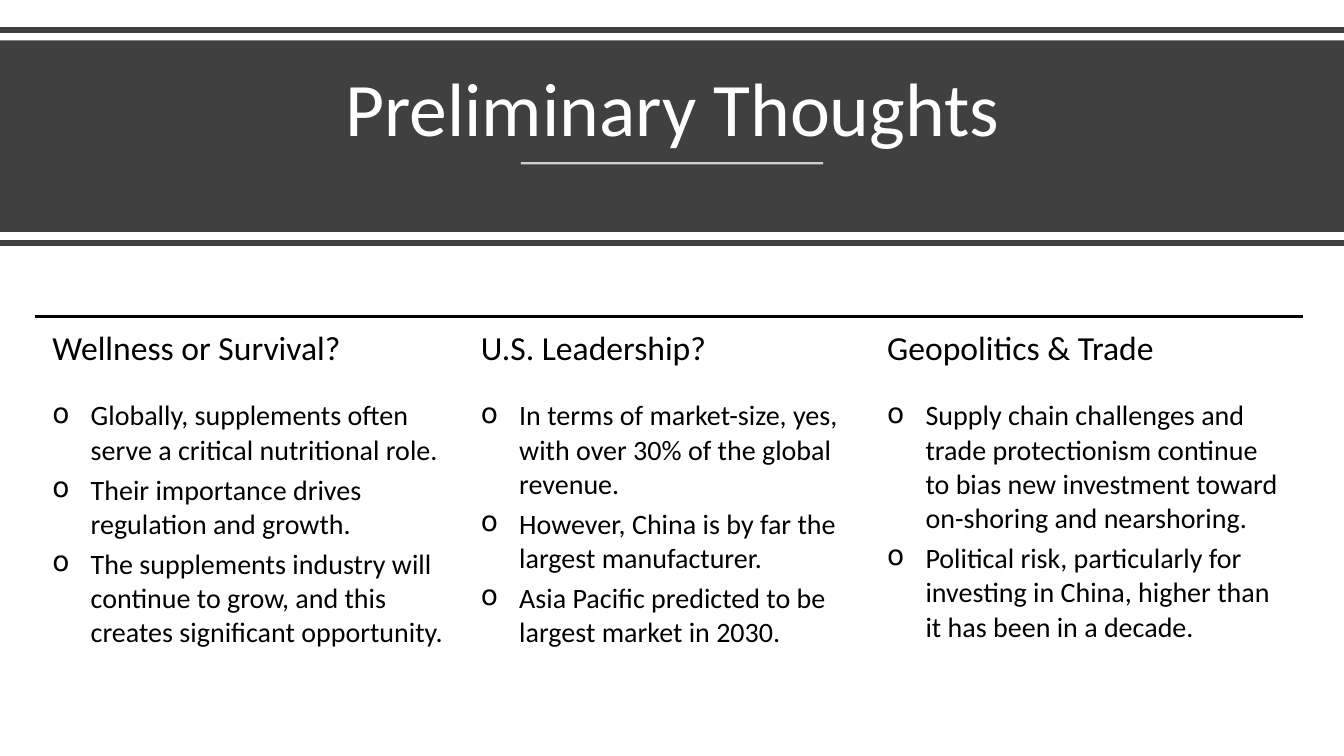
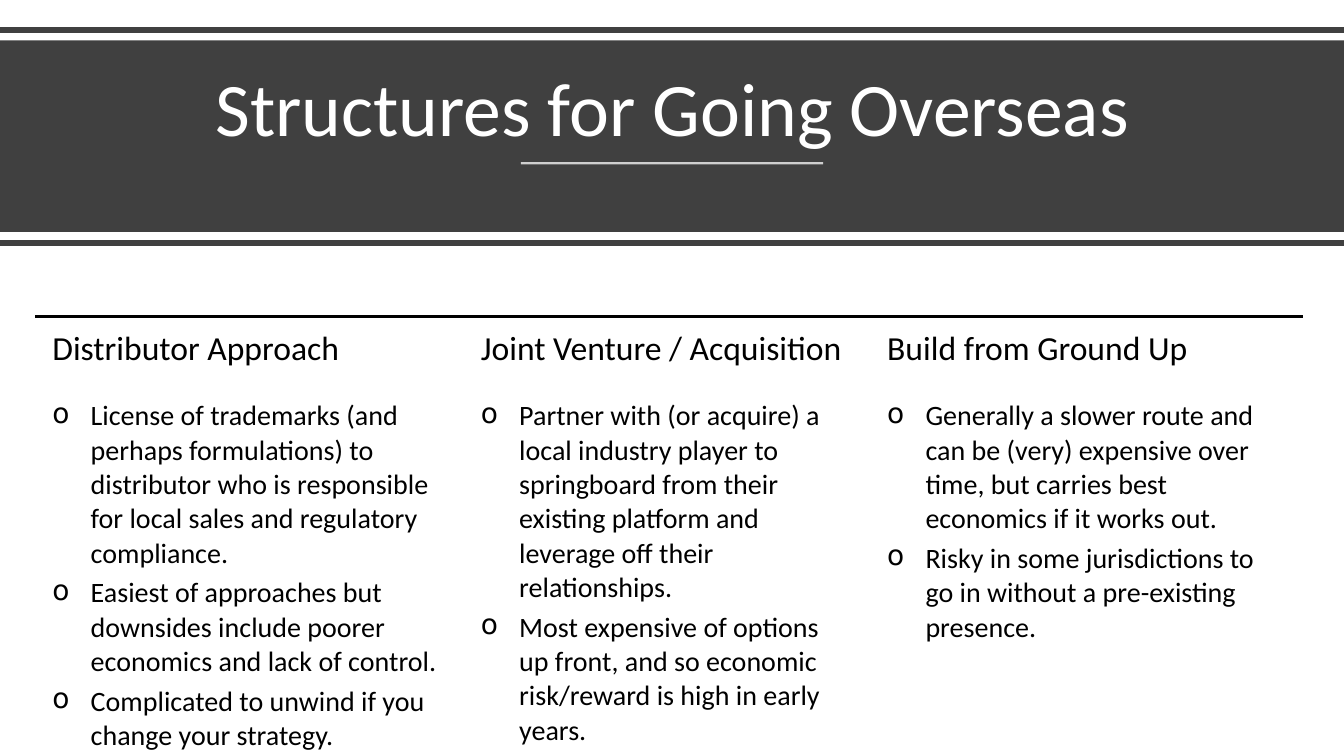
from lxml import etree
from pptx import Presentation
from pptx.dml.color import RGBColor as RGB
from pptx.enum.shapes import MSO_CONNECTOR as CONN, MSO_SHAPE as SHAPE
from pptx.enum.text import MSO_ANCHOR as ANCHOR, PP_ALIGN as ALIGN
from pptx.oxml.ns import qn
from pptx.util import Inches, Pt

COLORS = {"band": "404040", "paper": "FFFFFF", "ink": "000000"}
FONT = "Calibri"
WIDE, HIGH = 13.33, 7.5
COLS = (4.25, 4.03, 4.29)
ROWS = (0.7, 2.69)
INDENT = 0.38

SLIDES = [
    ("Preliminary Thoughts", [
        ("Wellness or Survival?", [
            "Globally, supplements often serve a critical nutritional role.",
            "Their importance drives regulation and growth.",
            "The supplements industry will continue to grow, and this "
            "creates significant opportunity."]),
        ("U.S. Leadership?", [
            "In terms of market-size, yes, with over 30% of the global revenue.",
            "However, China is by far the largest manufacturer.",
            "Asia Pacific predicted to be largest market in 2030."]),
        ("Geopolitics & Trade", [
            "Supply chain challenges and trade protectionism continue to bias "
            "new investment toward on-shoring and nearshoring.",
            "Political risk, particularly for investing in China, higher than "
            "it has been in a decade."]),
    ]),
    ("Structures for Going Overseas", [
        ("Distributor Approach", [
            "License of trademarks (and perhaps formulations) to distributor "
            "who is responsible for local sales and regulatory compliance.",
            "Easiest of approaches but downsides include poorer economics and "
            "lack of control.",
            "Complicated to unwind if you change your strategy."]),
        ("Joint Venture / Acquisition", [
            "Partner with (or acquire) a local industry player to springboard "
            "from their existing platform and leverage off their relationships.",
            "Most expensive of options up front, and so economic risk/reward "
            "is high in early years."]),
        ("Build from Ground Up", [
            "Generally a slower route and can be (very) expensive over time, "
            "but carries best economics if it works out.",
            "Risky in some jurisdictions to go in without a pre-existing "
            "presence."]),
    ]),
]


def color(name):
    return RGB.from_string(COLORS[name])


def sub(parent, tag, **attrs):
    return etree.SubElement(parent, qn(tag), attrs)


def add_run(para, text, size, ink):
    run = para.add_run()
    run.text = text
    run.font.name, run.font.size = FONT, Pt(size)
    run.font.color.rgb = color(ink)


def add_rule(slide, left, right, y, ink, width, alpha=None):
    rule = slide.shapes.add_connector(
        CONN.STRAIGHT, *map(Inches, (left, y, right, y)))
    rule.line.color.rgb = color(ink)
    rule.line.width = Pt(width)
    props = rule._element.spPr
    if alpha:
        sub(props.find(".//" + qn("a:srgbClr")), "a:alpha", val=str(alpha * 1000))
    sub(props, "a:effectLst")


def add_banner(slide, title, top, height):
    # Dark band between two thin rules
    band = slide.shapes.add_shape(
        SHAPE.RECTANGLE, *map(Inches, (0, top, WIDE, height)))
    band.shadow.inherit = False
    band.fill.solid()
    band.fill.fore_color.rgb = color("band")
    band.line.fill.background()
    for y in (top - 0.1, top + height + 0.11):
        add_rule(slide, 0, WIDE, y, "band", 4)

    # Title with a short underline
    box = slide.shapes.add_textbox(
        *map(Inches, (0.58, top + 0.14, 12.18, 1.02)))
    frame = box.text_frame
    frame.word_wrap = True
    frame.vertical_anchor = ANCHOR.BOTTOM
    para = frame.paragraphs[0]
    para.alignment, para.line_spacing = ALIGN.CENTER, 0.9
    add_run(para, title, 54, "paper")
    add_rule(slide, WIDE / 2 - 1.5, WIDE / 2 + 1.5, top + 1.22, "paper", 1.5, 75)


def style_cell(cell, ruled):
    cell.margin_left = cell.margin_right = Inches(0.17)
    cell.margin_top = cell.margin_bottom = Inches(0.12)
    props = cell._tc.get_or_add_tcPr()
    for side in "LRTB":
        if ruled and side == "T":
            edge = sub(props, "a:lnT", w=str(Pt(2.25)))
            sub(sub(edge, "a:solidFill"), "a:srgbClr", val=COLORS["ink"])
        else:
            sub(sub(props, "a:ln" + side, w="0"), "a:noFill")
    cell.fill.background()


def add_bullet(para, text):
    props = para._p.get_or_add_pPr()
    props.set("marL", str(Inches(INDENT)))
    props.set("indent", str(-Inches(INDENT)))
    para.space_after = Pt(4)
    sub(props, "a:buChar", char="o")
    add_run(para, text, 20, "ink")


def add_topics(slide, topics, left, top):
    frame = slide.shapes.add_table(
        len(ROWS), len(COLS),
        *map(Inches, (left, top, sum(COLS), sum(ROWS))))
    table = frame.table
    table.first_row = table.horz_banding = False
    for row, height in zip(table.rows, ROWS):
        row.height = Inches(height)
    for col, (head, points) in enumerate(topics):
        table.columns[col].width = Inches(COLS[col])
        name, body = (table.cell(row, col) for row in range(2))
        style_cell(name, True)
        style_cell(body, False)
        add_run(name.text_frame.paragraphs[0], head, 24, "ink")
        text = body.text_frame
        for i, point in enumerate(points):
            add_bullet(text.add_paragraph() if i else text.paragraphs[0], point)


def main():
    deck = Presentation()
    deck.slide_width, deck.slide_height = Inches(WIDE), Inches(HIGH)
    for title, topics in SLIDES:
        slide = deck.slides.add_slide(deck.slide_layouts[6])
        add_banner(slide, title, 0.4, 1.9)
        add_topics(slide, topics, 0.35, 3.14)
    deck.save("out.pptx")


if __name__ == "__main__":
    main()
